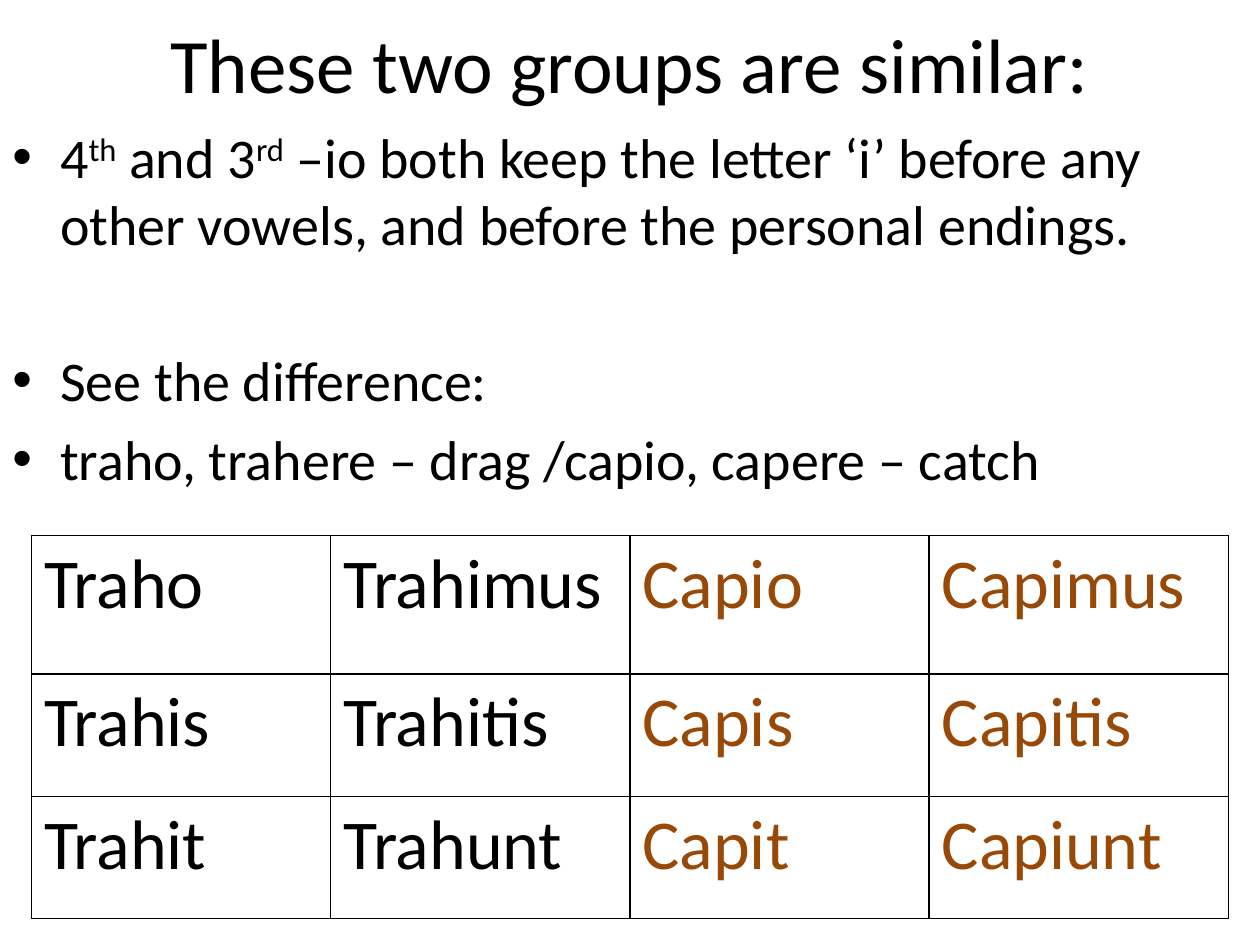
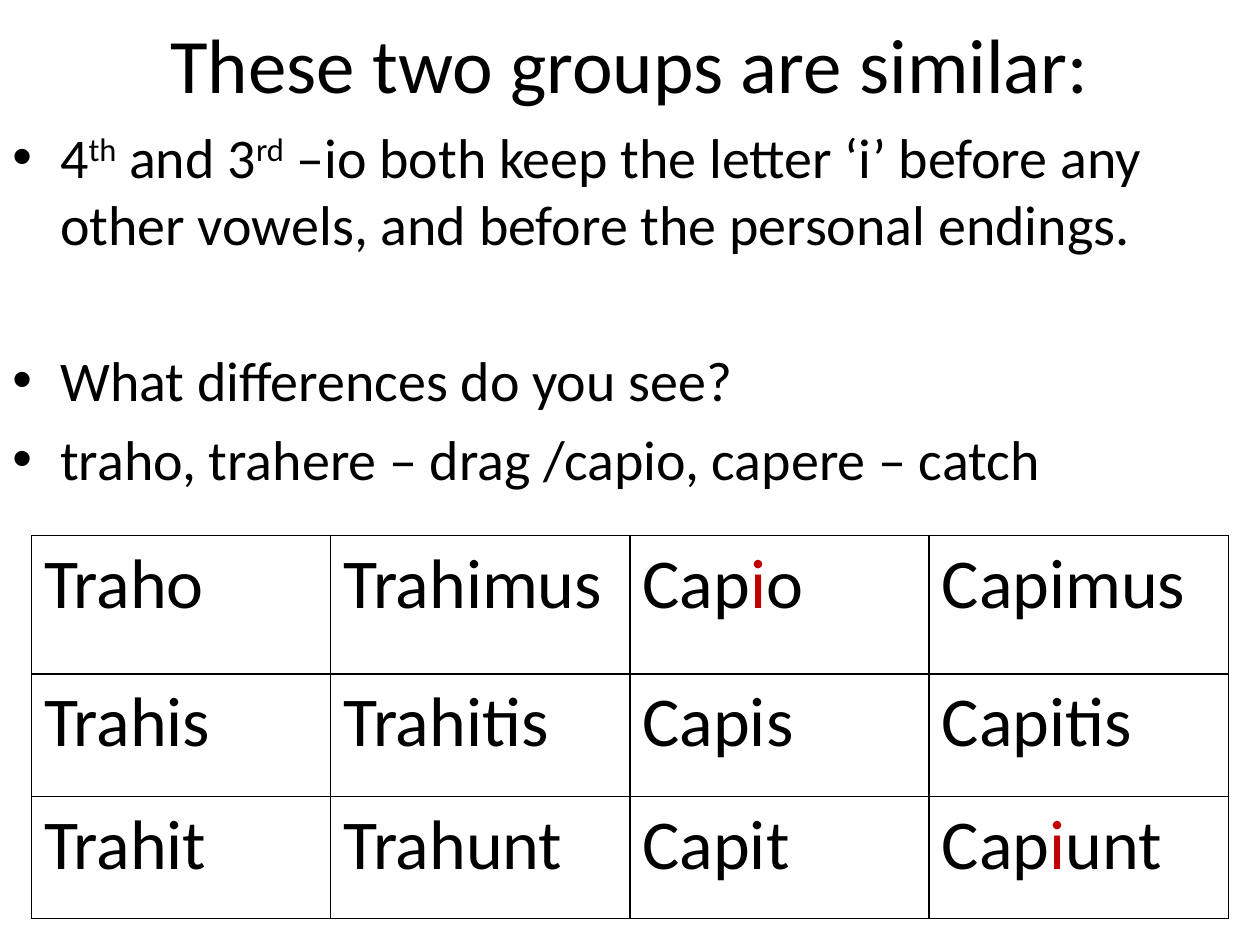
"""Build two Latin grammar slides comparing traho and capio."""
from dataclasses import dataclass

from lxml import etree
from pptx import Presentation
from pptx.dml.color import RGBColor
from pptx.enum.text import MSO_ANCHOR, PP_ALIGN
from pptx.oxml.ns import qn
from pptx.util import Inches, Pt

CENTER, LEFT = PP_ALIGN.CENTER, PP_ALIGN.LEFT
MIDDLE = MSO_ANCHOR.MIDDLE


@dataclass(frozen=True)
class Theme:
    font: str = "Calibri"
    black: str = "000000"
    brown: str = "984807"
    red: str = "C00000"
    title: int = 44
    body: int = 32
    cell: int = 40


T = Theme()
TITLE = "These two groups are similar:"
RULE = ("4|th| and 3|rd| –io both keep the letter ‘i’ before any other vowels, "
        "and before the personal endings.")
VERBS = "traho, trahere – drag /capio, capere – catch"
TRAHO = [("Traho", "Trahimus"), ("Trahis", "Trahitis"), ("Trahit", "Trahunt")]
CAPIO = [("Capio", "Capimus"), ("Capis", "Capitis"), ("Capit", "Capiunt")]
CAPIO_MARKED = [("Cap|i|o", "Capimus"), ("Capis", "Capitis"), ("Capit", "Cap|i|unt")]
SLIDES = [
    ("See the difference:", CAPIO, T.brown),
    ("What differences do you see?", CAPIO_MARKED, T.black),
]
ROW_HEIGHTS = [1.1, 0.97, 0.97]


def write(p, text, size, color=T.black, align=LEFT, marked=None, raised=False,
          before=0, bullet=False):
    p.alignment = align
    p.space_before = Pt(before)
    for i, part in enumerate(text.split("|")):
        r = p.add_run()
        r.text = part
        r.font.name, r.font.size = T.font, Pt(size)
        is_marked = i % 2 == 1
        r.font.color.rgb = RGBColor.from_string(marked if is_marked and marked else color)
        if is_marked and raised:
            r.font._element.set("baseline", "30000")
    if bullet:
        pPr = p._p.get_or_add_pPr()
        pPr.set("marL", str(Inches(0.38)))
        pPr.set("indent", str(-Inches(0.38)))
        etree.SubElement(pPr, qn("a:buFont"), typeface="Arial")
        etree.SubElement(pPr, qn("a:buChar"), char="•")


def add_borders(cell):
    tcPr = cell._tc.get_or_add_tcPr()
    for side in ("a:lnL", "a:lnR", "a:lnT", "a:lnB"):
        ln = etree.SubElement(tcPr, qn(side), w=str(Pt(1)))
        fill = etree.SubElement(ln, qn("a:solidFill"))
        etree.SubElement(fill, qn("a:srgbClr"), val=T.black)


prs = Presentation()
prs.slide_width, prs.slide_height = Inches(10), Inches(7.5)

for question, capio, capio_color in SLIDES:
    s = prs.slides.add_slide(prs.slide_layouts[6])

    tf = s.shapes.add_textbox(0, 0, Inches(10), Inches(1)).text_frame
    tf.word_wrap = True
    tf.vertical_anchor = MIDDLE
    write(tf.paragraphs[0], TITLE, T.title, align=CENTER)

    tf = s.shapes.add_textbox(0, Inches(0.92), Inches(10), Inches(6.58)).text_frame
    tf.word_wrap = True
    for i, (line, before) in enumerate([(RULE, 6.4), (question, 51), (VERBS, 6.4)]):
        p = tf.add_paragraph() if i else tf.paragraphs[0]
        write(p, line, T.body, raised=True, before=before, bullet=True)

    table = s.shapes.add_table(3, 4, Inches(0.25), Inches(4.25),
                               Inches(9.5), Inches(sum(ROW_HEIGHTS))).table
    table.first_row = table.horz_banding = False
    for row, height in zip(table.rows, ROW_HEIGHTS):
        row.height = Inches(height)
    for r, forms in enumerate(zip(TRAHO, capio)):
        for c, form in enumerate(forms[0] + forms[1]):
            cell = table.cell(r, c)
            add_borders(cell)
            cell.fill.background()
            write(cell.text_frame.paragraphs[0], form, T.cell,
                  color=T.black if c < 2 else capio_color, marked=T.red)

prs.save("out.pptx")
